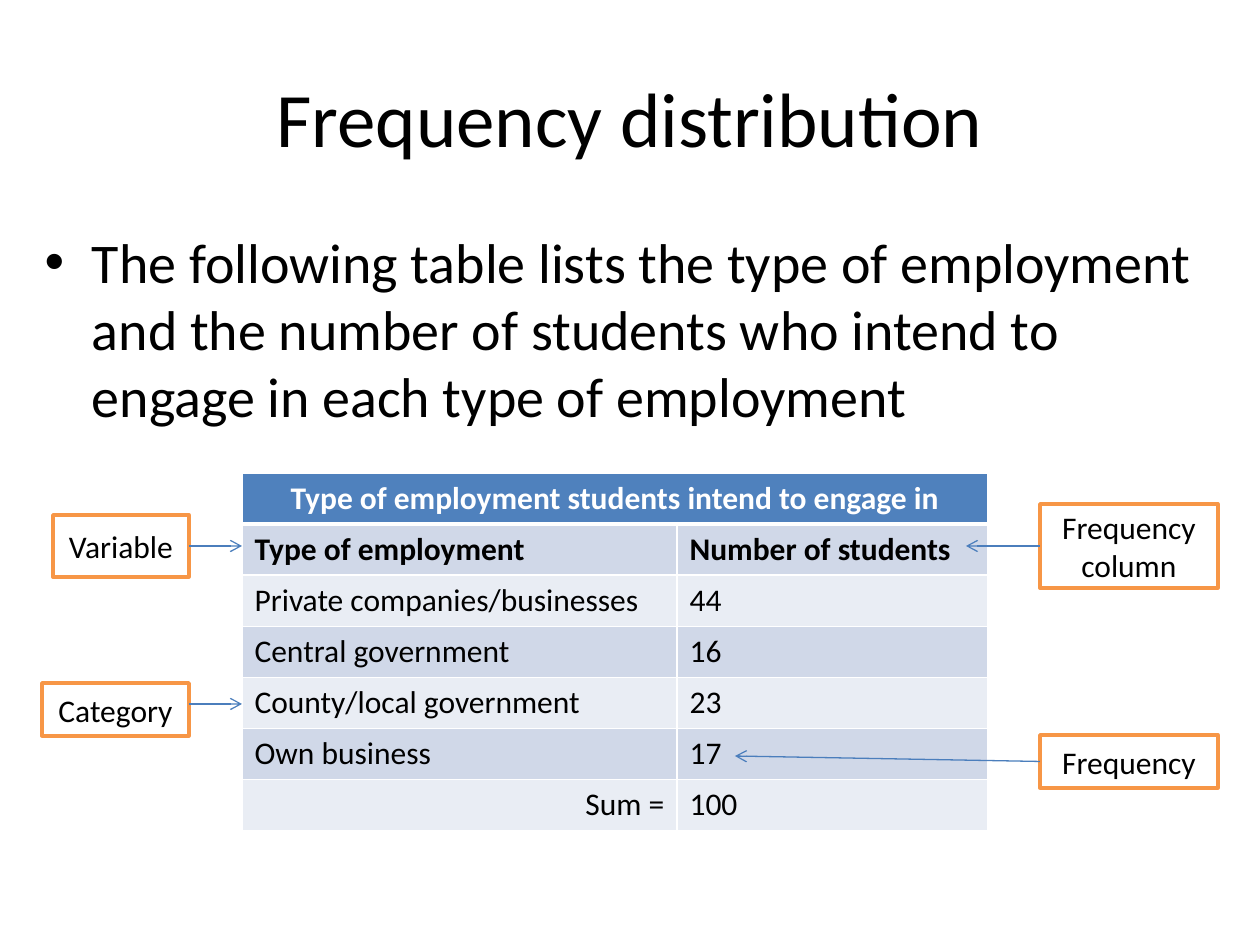
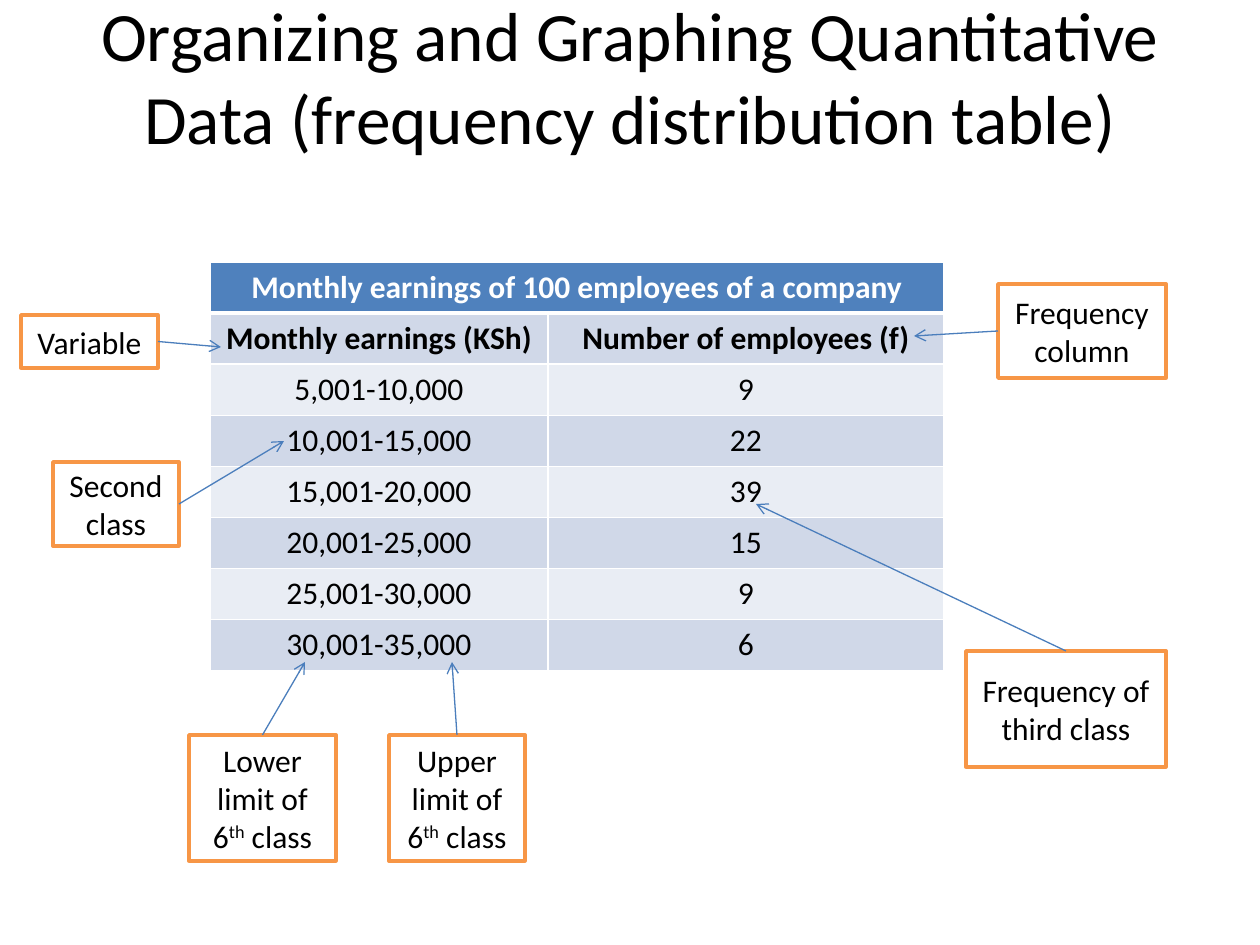
from lxml import etree
from pptx import Presentation
from pptx.dml.color import RGBColor
from pptx.enum.shapes import MSO_CONNECTOR, MSO_SHAPE
from pptx.enum.text import MSO_ANCHOR, MSO_AUTO_SIZE, PP_ALIGN
from pptx.oxml.ns import qn
from pptx.util import Emu, Pt

EMU_PER_PX = 914400 / 126
FONT = "Calibri"
BLACK = RGBColor(0x00, 0x00, 0x00)
WHITE = RGBColor(0xFF, 0xFF, 0xFF)
HEADER_BLUE = RGBColor(0x4F, 0x81, 0xBD)
DARK_BAND = RGBColor(0xD0, 0xD8, 0xE8)
LIGHT_BAND = RGBColor(0xE9, 0xED, 0xF4)
ARROW_BLUE = RGBColor(0x4B, 0x7E, 0xBC)
LABEL_ORANGE = RGBColor(0xF7, 0x96, 0x46)
TOP, LEFT, RIGHT = 0, 1, 3
ROW_HEIGHT = 51
CALLOUT_SIZE = 18


def px(length):
    """Turn a length in px into EMU."""
    return Emu(round(length * EMU_PER_PX))


def place(shape, left, top, width, height):
    """Move and size a shape, given in px."""
    shape.left, shape.top = px(left), px(top)
    shape.width, shape.height = px(width), px(height)


def style(paragraph, size, color=BLACK, bold=False, align=PP_ALIGN.LEFT):
    """Set the font and alignment of a paragraph."""
    paragraph.alignment = align
    font = paragraph.font
    font.name, font.size, font.bold = FONT, Pt(size), bold
    font.color.rgb = color


def add_title(slide, title, size):
    """Fill the title placeholder."""
    place(slide.shapes.title, 63, 38, 1134, 157)
    frame = slide.shapes.title.text_frame
    frame.text = title
    frame.auto_size = MSO_AUTO_SIZE.NONE
    frame.vertical_anchor = MSO_ANCHOR.MIDDLE
    style(frame.paragraphs[0], size, align=PP_ALIGN.CENTER)
    return frame


def add_bullet(slide, statement):
    """Fill the body placeholder with one bullet."""
    body = slide.placeholders[1]
    place(body, 32, 221, 1207, 609)
    body.text_frame.text = statement
    body.text_frame.auto_size = MSO_AUTO_SIZE.NONE
    style(body.text_frame.paragraphs[0], 32)


def set_borders(cell, top=1, bottom=1):
    """Draw white borders round a cell, with widths in points."""
    properties = cell._tc.get_or_add_tcPr()
    sides = {"a:lnL": 1, "a:lnR": 1, "a:lnT": top, "a:lnB": bottom}
    for position, (tag, width) in enumerate(sides.items()):
        border = etree.Element(qn(tag), w=str(Pt(width)))
        fill = etree.SubElement(border, qn("a:solidFill"))
        etree.SubElement(fill, qn("a:srgbClr"), val=str(WHITE))
        properties.insert(position, border)


def add_frequency_table(slide, left, top, widths, caption, rows, align):
    """Add a table with a merged caption, a bold heading row and banded rows."""
    rows = [(caption, ""), *rows]
    table = slide.shapes.add_table(
        len(rows), len(widths), px(left), px(top),
        px(sum(widths)), px(ROW_HEIGHT * len(rows))).table
    table.first_row = table.horz_banding = False
    for column, width in zip(table.columns, widths):
        column.width = px(width)
    table.cell(0, 0).merge(table.cell(0, 1))
    for r, entries in enumerate(rows):
        table.rows[r].height = px(ROW_HEIGHT)
        band = HEADER_BLUE if r == 0 else DARK_BAND if r % 2 else LIGHT_BAND
        for c, entry in enumerate(entries):
            cell = table.cell(r, c)
            cell.text = entry
            cell.fill.solid()
            cell.fill.fore_color.rgb = band
            set_borders(cell, top=3 if r == 1 else 1, bottom=3 if r == 0 else 1)
            style(cell.text_frame.paragraphs[0], 18,
                  color=WHITE if r == 0 else BLACK, bold=r < 2,
                  align=PP_ALIGN.CENTER if r == 0 else align)
    return table


def add_label(slide, box, label, superscript="", ending=""):
    """Add an orange-framed label, with an optional raised part and ending."""
    frame = slide.shapes.add_shape(MSO_SHAPE.RECTANGLE, *map(px, box))
    frame.shadow.inherit = False
    frame.fill.solid()
    frame.fill.fore_color.rgb = WHITE
    frame.line.color.rgb = LABEL_ORANGE
    frame.line.width = Pt(2)
    frame.text_frame.word_wrap = True
    frame.text_frame.vertical_anchor = MSO_ANCHOR.MIDDLE
    paragraph = frame.text_frame.paragraphs[0]
    style(paragraph, CALLOUT_SIZE, align=PP_ALIGN.CENTER)
    paragraph.add_run().text = label
    if superscript:
        raised = paragraph.add_run()
        raised.text = superscript
        raised.font._element.set("baseline", "30000")
        paragraph.add_run().text = ending
    return frame


def add_arrow(slide, start, target):
    """Add a thin arrow between two points in px."""
    arrow = slide.shapes.add_connector(
        MSO_CONNECTOR.STRAIGHT, *map(px, (*start, *target)))
    arrow.line.color.rgb = ARROW_BLUE
    arrow.line.width = Pt(0.75)
    etree.SubElement(arrow.line._get_or_add_ln(), qn("a:tailEnd"), type="arrow")
    etree.SubElement(arrow._element.spPr, qn("a:effectLst"))
    return arrow


def add_callout(slide, box, side, target, *label):
    """Add a label joined to an arrow that points at a table entry."""
    frame = add_label(slide, box, *label)
    add_arrow(slide, box[:2], target).begin_connect(frame, side)


def build_employment_slide(deck):
    """Build the slide on types of employment."""
    slide = deck.slides.add_slide(deck.slide_layouts[1])
    add_title(slide, "Frequency distribution", 44)
    add_bullet(slide, "The following table lists the type of employment and the number "
                      "of students who intend to engage in each type of employment")
    table = add_frequency_table(
        slide, 242, 473, (435, 311),
        "Type of employment students intend to engage in",
        [("Type of employment", "Number of students"),
         ("Private companies/businesses", "44"),
         ("Central government", "16"),
         ("County/local government", "23"),
         ("Own business", "17"),
         ("Sum =", "100")], PP_ALIGN.LEFT)
    table.cell(6, 0).text_frame.paragraphs[0].alignment = PP_ALIGN.RIGHT
    add_callout(slide, (1040, 504, 178, 84), LEFT, (966, 546), "Frequency column")
    add_callout(slide, (53, 515, 136, 62), RIGHT, (242, 546), "Variable")
    add_callout(slide, (1040, 735, 178, 53), LEFT, (735, 756), "Frequency")
    add_label(slide, (42, 683, 147, 53), "Category")
    add_arrow(slide, (189, 704), (242, 704))


def build_earnings_slide(deck):
    """Build the slide on monthly earnings."""
    slide = deck.slides.add_slide(deck.slide_layouts[5])
    title = add_title(slide, "Organizing and Graphing Quantitative Data "
                             "(frequency distribution table)", 39.6)
    title.margin_bottom = px(89)
    add_frequency_table(
        slide, 210, 262, (338, 396),
        "Monthly earnings of 100 employees of a company",
        [("Monthly earnings (KSh)", "Number of employees (f)"),
         ("5,001-10,000", "9"),
         ("10,001-15,000", "22"),
         ("15,001-20,000", "39"),
         ("20,001-25,000", "15"),
         ("25,001-30,000", "9"),
         ("30,001-35,000", "6")], PP_ALIGN.CENTER)
    add_callout(slide, (998, 284, 168, 94), LEFT, (914, 336), "Frequency column")
    add_callout(slide, (21, 315, 137, 53), RIGHT, (221, 347), "Variable")
    add_callout(slide, (53, 462, 126, 84), RIGHT, (284, 441), "Second class")
    add_callout(slide, (966, 651, 200, 116), TOP, (756, 504), "Frequency of third class")
    add_callout(slide, (189, 735, 147, 126), TOP, (305, 662),
                "Lower limit of 6", "th", " class")
    add_callout(slide, (389, 735, 136, 126), TOP, (452, 662),
                "Upper limit of 6", "th", " class")


def main():
    """Build and save the deck."""
    deck = Presentation()
    deck.slide_width, deck.slide_height = px(1260), px(945)
    build_employment_slide(deck)
    build_earnings_slide(deck)
    deck.save("out.pptx")


if __name__ == "__main__":
    main()
